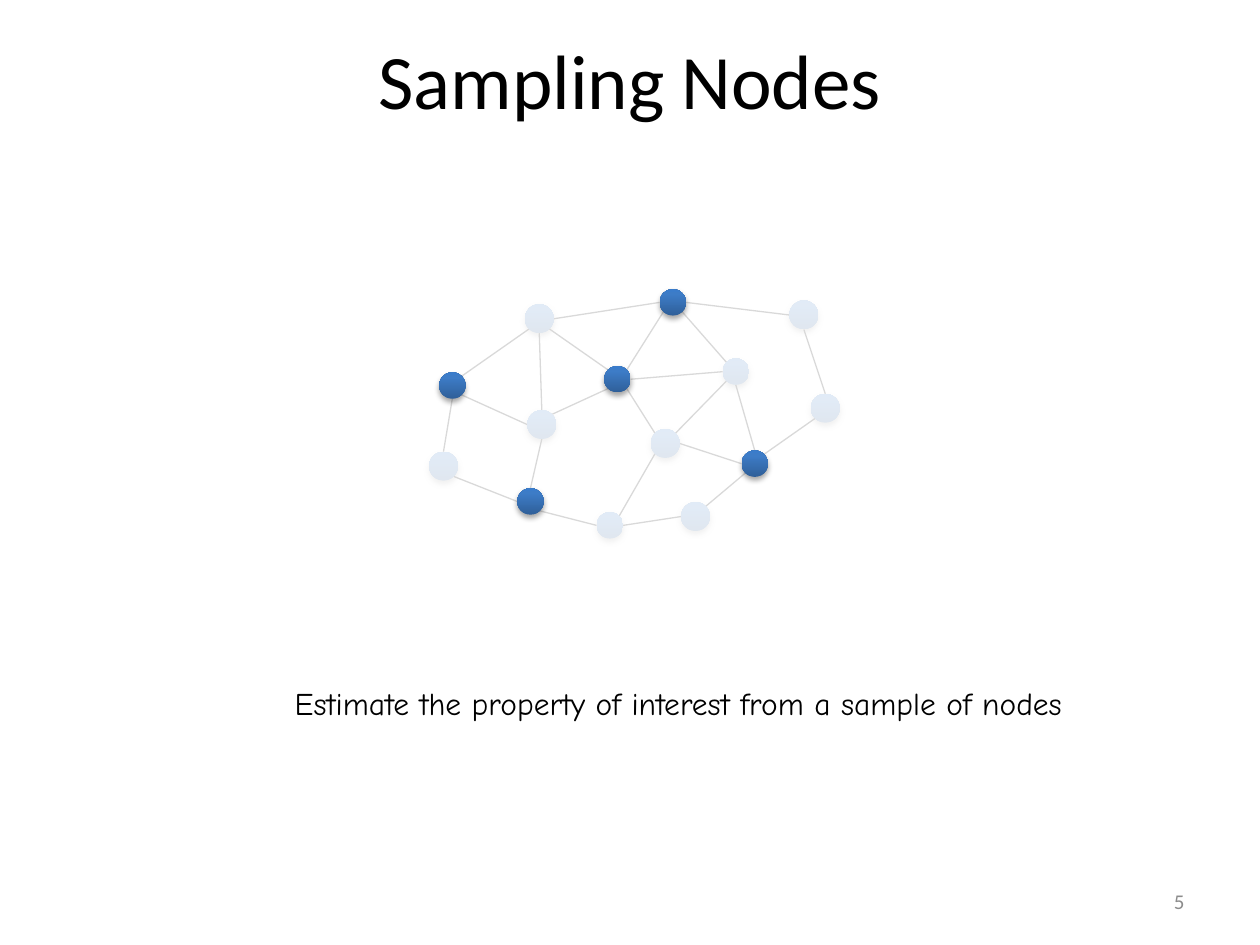
from lxml import etree
from pptx import Presentation
from pptx.dml.color import RGBColor
from pptx.enum.shapes import MSO_CONNECTOR, MSO_SHAPE
from pptx.enum.text import MSO_ANCHOR, PP_ALIGN
from pptx.oxml import parse_xml
from pptx.oxml.ns import nsdecls, qn
from pptx.util import Inches, Pt

STRAIGHT = MSO_CONNECTOR.STRAIGHT
OVAL, RECT = MSO_SHAPE.OVAL, MSO_SHAPE.RECTANGLE
LEFT, CENTER, RIGHT = PP_ALIGN.LEFT, PP_ALIGN.CENTER, PP_ALIGN.RIGHT
TOP, MIDDLE = MSO_ANCHOR.TOP, MSO_ANCHOR.MIDDLE

# name: (centre x, centre y) in inches
NODES = {
    "A": (4.28, 2.53), "B": (5.34, 2.4), "C": (6.38, 2.5), "D": (6.55, 3.24),
    "E": (5.84, 2.95), "F": (5.99, 3.68), "G": (4.9, 3.01), "H": (4.3, 3.37),
    "I": (3.59, 3.06), "J": (3.52, 3.7), "K": (4.21, 3.98), "L": (4.84, 4.17),
    "M": (5.28, 3.52), "N": (5.52, 4.1),
}
SAMPLED = "BFGKI"
SMALL = SAMPLED + "EL"

# node and compass side at each end
EDGES = """A.E-B.W B.E-C.W C.S-D.N D.SW-F.NE F.SW-N.NE L.E-N.W K.SE-L.W
J.SE-K.W I.S-J.N I.NE-A.SW I.SE-H.W A.S-H.N A.SE-G.NW H.NE-G.SW H.S-K.N
G.NE-B.SW G.E-E.W G.SE-M.NW B.SE-E.NW E.SW-M.NE E.S-F.N M.E-F.W
M.SW-L.NE""".split()

GRADIENT = [(0, "2F5F99"), (80, "3D7CC7"), (100, "3A7CCB")]


def rgb(color):
    return RGBColor.from_string(color)


def diameter(name):
    return 0.21 if name in SMALL else 0.23


def side_point(end):
    """Point on a node's rim, such as A.NE."""
    name, side = end.split(".")
    x, y = NODES[name]
    reach = diameter(name) / 2 * (0.71 if len(side) == 2 else 1)
    return (x + reach * (("E" in side) - ("W" in side)),
            y + reach * (("S" in side) - ("N" in side)))


def add_edge(s, edge):
    (x1, y1), (x2, y2) = map(side_point, edge.split("-"))
    line = s.shapes.add_connector(STRAIGHT, Inches(x1), Inches(y1),
                                  Inches(x2), Inches(y2))
    line.line.color.rgb = rgb("000000")
    line.line.width = Pt(0.75)
    etree.SubElement(line._element.spPr, qn("a:effectLst"))


def add_node(s, name):
    x, y = NODES[name]
    d = diameter(name)
    sp = s.shapes.add_shape(OVAL, Inches(x - d / 2), Inches(y - d / 2),
                            Inches(d), Inches(d))
    sp.line.fill.background()
    stops = "".join(f'<a:gs pos="{pos * 1000}"><a:srgbClr val="{color}"/></a:gs>'
                    for pos, color in GRADIENT)
    fill = parse_xml(f'<a:gradFill {nsdecls("a")}><a:gsLst>{stops}</a:gsLst>'
                     '<a:lin ang="16200000" scaled="0"/></a:gradFill>')
    shadow = parse_xml(
        f'<a:effectLst {nsdecls("a")}><a:outerShdw blurRad="{Pt(3.1)}" '
        f'dist="{Pt(1.8)}" dir="5400000" rotWithShape="0">'
        '<a:srgbClr val="000000"><a:alpha val="35000"/></a:srgbClr>'
        '</a:outerShdw></a:effectLst>')
    spPr = sp._element.spPr
    spPr.find(qn("a:prstGeom")).addnext(fill)
    spPr.append(shadow)


def add_veil(s, x, y, w, h, opacity):
    """Translucent white panel that fades whatever lies behind it."""
    sp = s.shapes.add_shape(RECT, Inches(x), Inches(y), Inches(w), Inches(h))
    sp.shadow.inherit = False
    sp.line.fill.background()
    sp.fill.solid()
    sp.fill.fore_color.rgb = rgb("FFFFFF")
    color = sp._element.spPr.find(qn("a:solidFill"))[0]
    etree.SubElement(color, qn("a:alpha"), val=str(opacity * 1000))


def set_text(sp, text, size, font, color, align, anchor):
    tf = sp.text_frame
    tf.text = text
    tf.word_wrap = True
    tf.vertical_anchor = anchor
    p = tf.paragraphs[0]
    p.alignment = align
    r = p.runs[0]
    r.font.size, r.font.name = Pt(size), font
    r.font.color.rgb = rgb(color)


def add_text(s, x, y, w, h, *style):
    sp = s.shapes.add_textbox(Inches(x), Inches(y), Inches(w), Inches(h))
    set_text(sp, *style)


def main():
    prs = Presentation()
    prs.slide_width, prs.slide_height = Inches(10), Inches(7.5)
    s = prs.slides.add_slide(prs.slide_layouts[5])

    title = s.shapes.title
    title.left, title.top = Inches(0.5), Inches(0)
    title.width, title.height = Inches(9), Inches(1.25)
    set_text(title, "Sampling Nodes", 44, "Calibri", "000000", CENTER, MIDDLE)

    for edge in EDGES:
        add_edge(s, edge)
    for name in NODES:
        if name not in SAMPLED:
            add_node(s, name)
    add_veil(s, 3.25, 2.34, 3.69, 2.04, 85)
    for name in SAMPLED:
        add_node(s, name)

    add_text(s, 2.24, 5.38, 7.48, 0.57,
             "Estimate the property of interest from a sample of nodes",
             18, "Comic Neue", "000000", LEFT, TOP)
    add_text(s, 7.17, 6.95, 2.33, 0.4, "5", 12, "Calibri", "8C8C8C", RIGHT, MIDDLE)
    prs.save("out.pptx")


if __name__ == "__main__":
    main()
